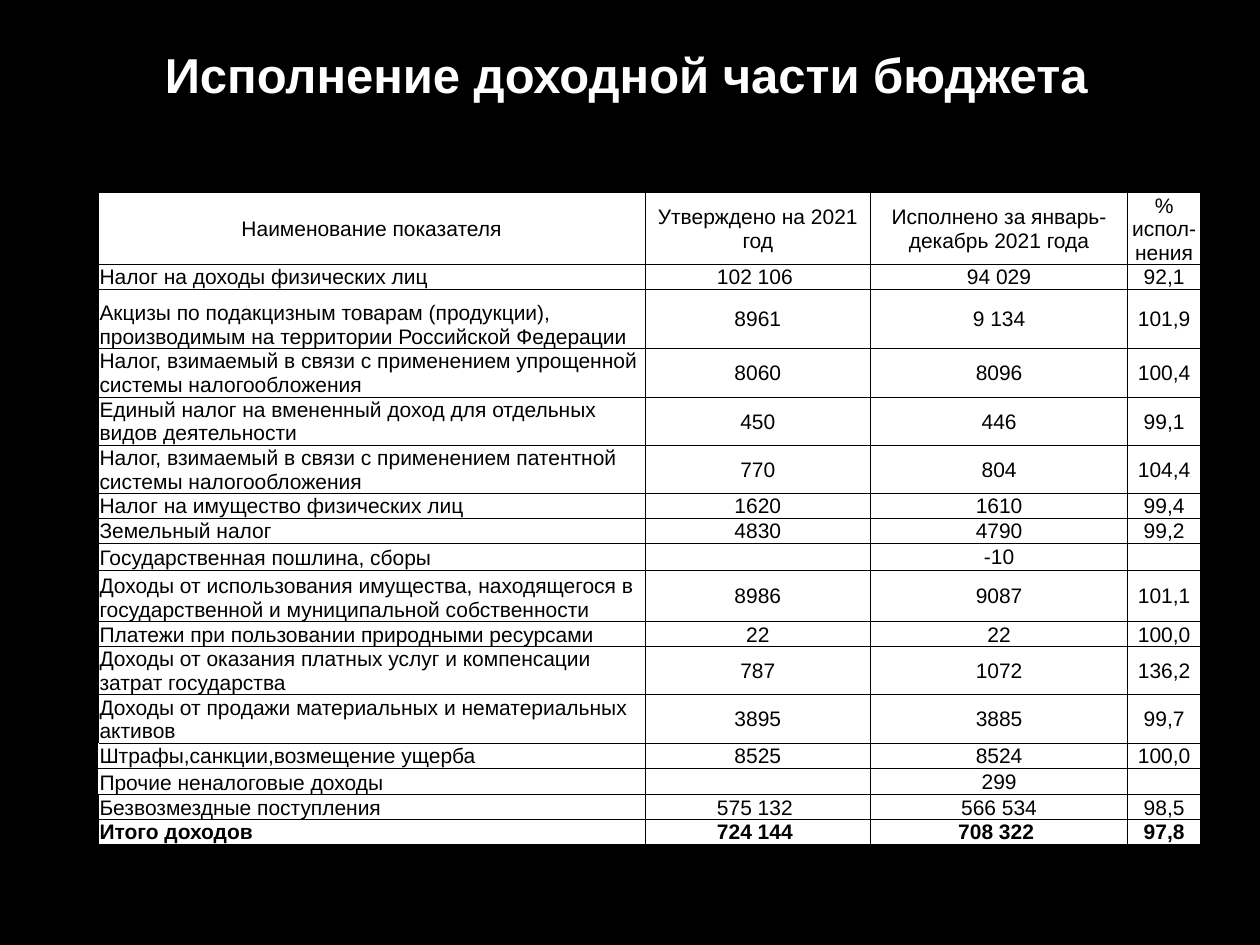
"""Build a slide with a table of budget revenue execution for 2021."""
from dataclasses import dataclass

from lxml.etree import SubElement
from pptx import Presentation
from pptx.dml.color import RGBColor
from pptx.enum.text import MSO_ANCHOR, PP_ALIGN
from pptx.oxml.ns import qn
from pptx.util import Inches, Pt


@dataclass(frozen=True)
class Theme:
    dark: str = "000000"
    light: str = "FFFFFF"
    font: str = "Arial"
    title_size: int = 28
    table_size: int = 12
    border_width: float = 0.5


theme = Theme()


def write_text(frame, text, size=theme.table_size, color=theme.dark, bold=False, align=PP_ALIGN.CENTER):
    paragraph = frame.paragraphs[0]
    paragraph.alignment = align
    if not text:
        SubElement(paragraph._p, qn("a:endParaRPr"), sz=str(size * 100))
        return
    run = paragraph.add_run()
    run.text = text
    run.font.name = theme.font
    run.font.size = Pt(size)
    run.font.bold = bold
    run.font.color.rgb = RGBColor.from_string(color)


def add_borders(cell, sides):
    properties = cell._tc.get_or_add_tcPr()
    for position, side in enumerate(sides):
        line = SubElement(properties, qn(f"a:ln{side}"), w=str(Pt(theme.border_width)))
        fill = SubElement(line, qn("a:solidFill"))
        SubElement(fill, qn("a:srgbClr"), val=theme.dark)
        properties.insert(position, line)


presentation = Presentation()
presentation.slide_width = Inches(10)
presentation.slide_height = Inches(7.5)
slide = presentation.slides.add_slide(presentation.slide_layouts[5])
slide.background.fill.solid()
slide.background.fill.fore_color.rgb = RGBColor.from_string(theme.dark)

title = slide.shapes.title
title.left, title.top, title.width, title.height = map(Inches, (0.47, 0.23, 9, 0.72))
title.text_frame.vertical_anchor = MSO_ANCHOR.MIDDLE
write_text(title.text_frame, "Исполнение доходной части бюджета",
           size=theme.title_size, color=theme.light, bold=True)

column_widths = [4.34, 1.79, 2.04, 0.58]
revenue_rows = [
    (0.56, "Наименование показателя", "Утверждено на 2021 год",
     "Исполнено за январь-декабрь 2021 года", "% испол-нения"),
    (0.19, "Налог на доходы физических лиц", "102 106 ", "94 029", "92,1"),
    (0.47, "Акцизы по подакцизным товарам (продукции), производимым на территории Российской Федерации",
     "8961", "9 134", "101,9"),
    (0.37, "Налог, взимаемый в связи с применением упрощенной системы налогообложения",
     "8060", "8096", "100,4"),
    (0.37, "Единый налог на вмененный доход для отдельных видов деятельности", "450", "446", "99,1"),
    (0.37, "Налог, взимаемый в связи с применением патентной системы налогообложения",
     "770", "804", "104,4"),
    (0.19, "Налог на имущество физических лиц", "1620", "1610", "99,4"),
    (0.19, "Земельный налог", "4830", "4790", "99,2"),
    (0.19, "Государственная пошлина, сборы", "", "-10", ""),
    (0.41, "Доходы от использования имущества, находящегося в государственной и муниципальной собственности",
     "8986", "9087", "101,1"),
    (0.19, "Платежи при пользовании природными ресурсами", "22", "22", "100,0"),
    (0.37, "Доходы от оказания платных услуг и компенсации затрат государства", "787", "1072", "136,2"),
    (0.36, "Доходы от продажи материальных и нематериальных активов", "3895", "3885", "99,7"),
    (0.18, "Штрафы,санкции,возмещение ущерба", "8525", "8524", "100,0"),
    (0.19, "Прочие неналоговые доходы", "", "299", ""),
    (0.19, "Безвозмездные поступления", "575 132 ", "566 534", "98,5"),
    (0.19, "Итого доходов", "724 144 ", "708 322 ", "97,8"),
]
total_row = len(revenue_rows) - 1
open_left_rows = (13, 14)

table_height = sum(row[0] for row in revenue_rows)
table_shape = slide.shapes.add_table(
    len(revenue_rows), len(column_widths), Inches(0.78), Inches(1.53),
    Inches(sum(column_widths)), Inches(table_height))
table = table_shape.table
table.first_row = False
table.horz_banding = False
for column, width in zip(table.columns, column_widths):
    column.width = Inches(width)

for row_index, (height, *texts) in enumerate(revenue_rows):
    table.rows[row_index].height = Inches(height)
    for column_index, text in enumerate(texts):
        cell = table.cell(row_index, column_index)
        cell.margin_left = cell.margin_top = cell.margin_right = Inches(0.01)
        cell.margin_bottom = Inches(0)
        is_name = column_index == 0 and row_index > 0
        align = PP_ALIGN.LEFT if is_name else PP_ALIGN.CENTER
        anchor = MSO_ANCHOR.BOTTOM if is_name and row_index != 10 else MSO_ANCHOR.MIDDLE
        if is_name and row_index >= total_row - 1:
            align, anchor = PP_ALIGN.JUSTIFY, MSO_ANCHOR.TOP
        elif row_index == total_row and column_index < 3:
            anchor = MSO_ANCHOR.TOP
        cell.vertical_anchor = anchor
        cell.fill.solid()
        cell.fill.fore_color.rgb = RGBColor.from_string(theme.light)
        add_borders(cell, "RTB" if column_index == 0 and row_index in open_left_rows else "LRTB")
        write_text(cell.text_frame, text, bold=row_index == total_row, align=align)

presentation.save("out.pptx")
